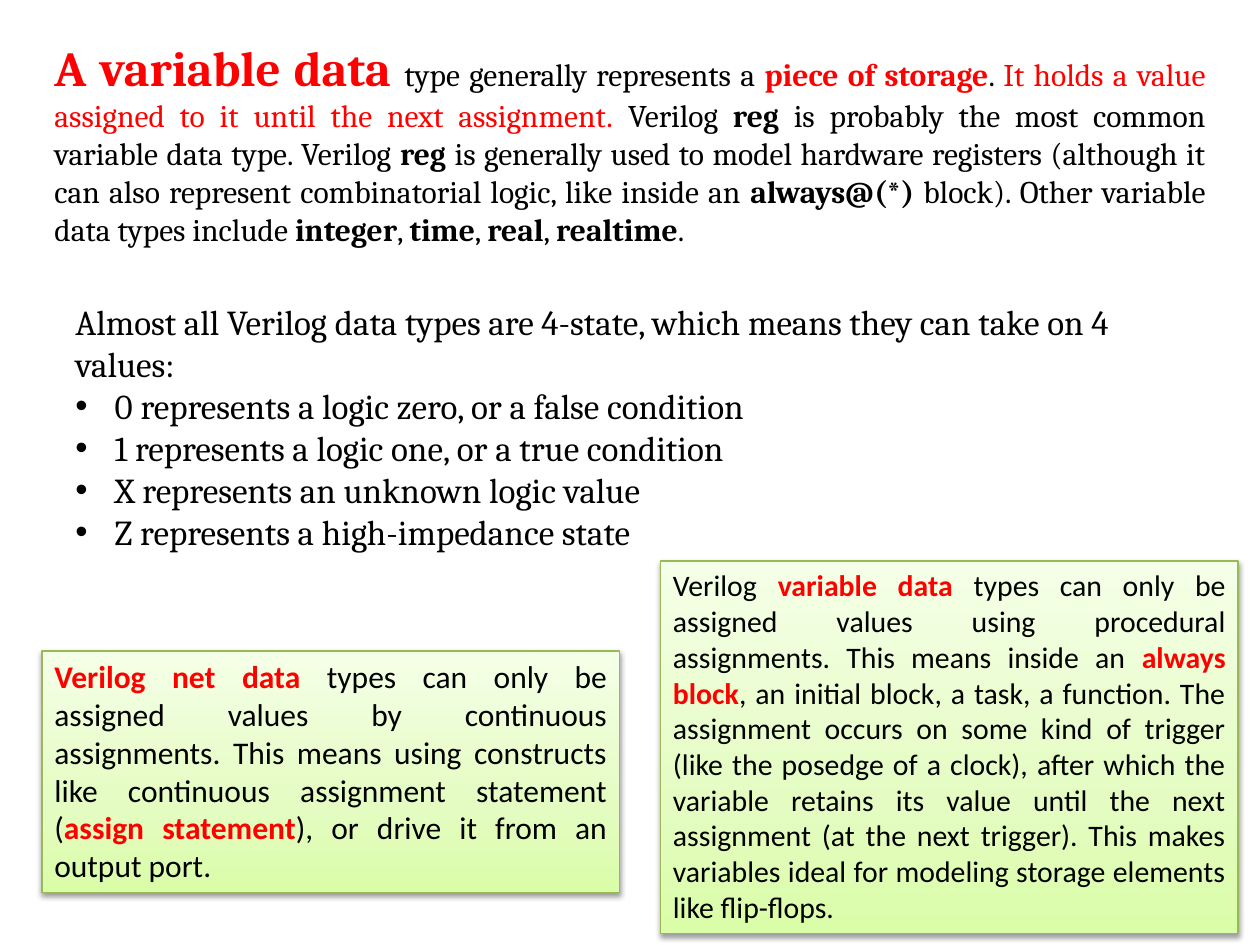
from lxml import etree
from pptx import Presentation
from pptx.dml.color import RGBColor
from pptx.enum.shapes import MSO_SHAPE
from pptx.enum.text import MSO_ANCHOR, MSO_AUTO_SIZE, PP_ALIGN
from pptx.oxml import parse_xml
from pptx.oxml.ns import nsdecls, qn
from pptx.util import Pt

RECTANGLE = MSO_SHAPE.RECTANGLE
TOP = MSO_ANCHOR.TOP
GROW = MSO_AUTO_SIZE.SHAPE_TO_FIT_TEXT
LEFT, JUSTIFY = PP_ALIGN.LEFT, PP_ALIGN.JUSTIFY

RED = RGBColor(0xFF, 0x00, 0x00)
BLACK = RGBColor(0x00, 0x00, 0x00)
BORDER_GREEN = RGBColor(0x98, 0xB9, 0x55)
GREEN_STOPS = (
    (0, RGBColor(0xDA, 0xFD, 0xA7)),
    (35, RGBColor(0xE4, 0xFC, 0xC2)),
    (100, RGBColor(0xF5, 0xFF, 0xE7)),
)

PLAIN = {"bold": False, "color": BLACK}
BOLD = {"bold": True, "color": BLACK}
NOTE = {"bold": False, "color": RED}
KEY = {"bold": True, "color": RED}
TITLE = {"bold": True, "color": RED, "size": Pt(28)}

VARIABLE_DATA = [
    ("A variable data ", TITLE),
    ("type generally represents a ", PLAIN),
    ("piece of storage", KEY),
    (". ", PLAIN),
    ("It holds a value assigned to it until the next assignment.", NOTE),
    (" Verilog ", PLAIN),
    ("reg", BOLD),
    (" is probably the most common variable data type. Verilog ", PLAIN),
    ("reg", BOLD),
    (" is generally used to model hardware registers (although it can also "
     "represent combinatorial logic, like inside an ", PLAIN),
    ("always@(*)", BOLD),
    (" block). Other variable data types include ", PLAIN),
    ("integer", BOLD),
    (", ", PLAIN),
    ("time", BOLD),
    (", ", PLAIN),
    ("real", BOLD),
    (", ", PLAIN),
    ("realtime", BOLD),
    (".", PLAIN),
]
STATES_INTRO = ("Almost all Verilog data types are 4-state, "
                "which means they can take on 4 values:")
STATES = [
    "0 represents a logic zero, or a false condition",
    "1 represents a logic one, or a true condition",
    "X represents an unknown logic value",
    "Z represents a high-impedance state",
]
NET_ASSIGNMENT = [
    ("Verilog net data ", KEY),
    ("types can only be assigned values by continuous assignments. This means "
     "using constructs like continuous assignment statement (", PLAIN),
    ("assign statement", KEY),
    ("), or drive it from an output port.", PLAIN),
]
VARIABLE_ASSIGNMENT = [
    ("Verilog ", PLAIN),
    ("variable data ", KEY),
    ("types can only be assigned values using procedural assignments. "
     "This means inside an ", PLAIN),
    ("always block", KEY),
    (", an initial block, a task, a function. The assignment occurs on some "
     "kind of trigger (like the posedge of a clock), after which the variable "
     "retains its value until the next assignment (at the next trigger). This "
     "makes variables ideal for modeling storage elements like flip-flops.", PLAIN),
]


def write_paragraph(para, spans, font, size, align):
    para.alignment = align
    for text, style in spans:
        span = para.add_run()
        span.text = text
        values = {"name": font, "size": size, **style}
        span.font.color.rgb = values.pop("color")
        for name, value in values.items():
            setattr(span.font, name, value)


def prepare_frame(box):
    frame = box.text_frame
    for name, value in {"word_wrap": True, "auto_size": GROW,
                        "vertical_anchor": TOP}.items():
        setattr(frame, name, value)
    return frame


def add_text(slide, bounds):
    return prepare_frame(slide.shapes.add_textbox(*map(Pt, bounds)))


def add_bullet(para, indent):
    properties = para._p.get_or_add_pPr()
    properties.set("marL", str(indent))
    properties.set("indent", str(-indent))
    etree.SubElement(properties, qn("a:buFont")).set("typeface", "Arial")
    etree.SubElement(properties, qn("a:buChar")).set("char", "•")


def fill_green(box):
    """Fade from deep green at the bottom to pale green at the top."""
    box.fill.gradient()
    box.fill.gradient_angle = 90
    stops = box._element.spPr.find(qn("a:gradFill")).find(qn("a:gsLst"))
    for stop in list(stops):
        stops.remove(stop)
    for percent, color in GREEN_STOPS:
        stop = etree.SubElement(stops, qn("a:gs"), pos=str(percent * 1000))
        etree.SubElement(stop, qn("a:srgbClr"), val=str(color))


def add_shadow(box):
    box._element.spPr.append(parse_xml(
        f'<a:effectLst {nsdecls("a")}>'
        f'<a:outerShdw blurRad="{Pt(3.1)}" dist="{Pt(1.6)}" dir="5400000" '
        'rotWithShape="0"><a:srgbClr val="000000"><a:alpha val="38000"/>'
        '</a:srgbClr></a:outerShdw></a:effectLst>'))


def add_green_box(slide, bounds, spans, size):
    box = slide.shapes.add_shape(RECTANGLE, *map(Pt, bounds))
    fill_green(box)
    box.line.color.rgb = BORDER_GREEN
    box.line.width = Pt(0.75)
    add_shadow(box)
    frame = prepare_frame(box)
    write_paragraph(frame.paragraphs[0], spans, "Calibri", size, JUSTIFY)


def add_states(slide, bounds):
    frame = add_text(slide, bounds)
    write_paragraph(frame.paragraphs[0], [(STATES_INTRO, PLAIN)],
                    "Cambria", Pt(20), LEFT)
    for state in STATES:
        para = frame.add_paragraph()
        write_paragraph(para, [(state, PLAIN)], "Cambria", Pt(20), LEFT)
        add_bullet(para, Pt(22.5))


def main():
    deck = Presentation()
    deck.slide_width, deck.slide_height = Pt(720), Pt(540)
    slide = deck.slides.add_slide(deck.slide_layouts[6])

    frame = add_text(slide, (24, 18, 672, 128))
    write_paragraph(frame.paragraphs[0], VARIABLE_DATA, "Cambria", Pt(18), JUSTIFY)
    add_states(slide, (36, 168, 648, 152.6))
    add_green_box(slide, (24, 372, 330, 138), NET_ASSIGNMENT, Pt(18))
    add_green_box(slide, (377.5, 320.6, 330, 213), VARIABLE_ASSIGNMENT, Pt(17))

    deck.save("out.pptx")


if __name__ == "__main__":
    main()
